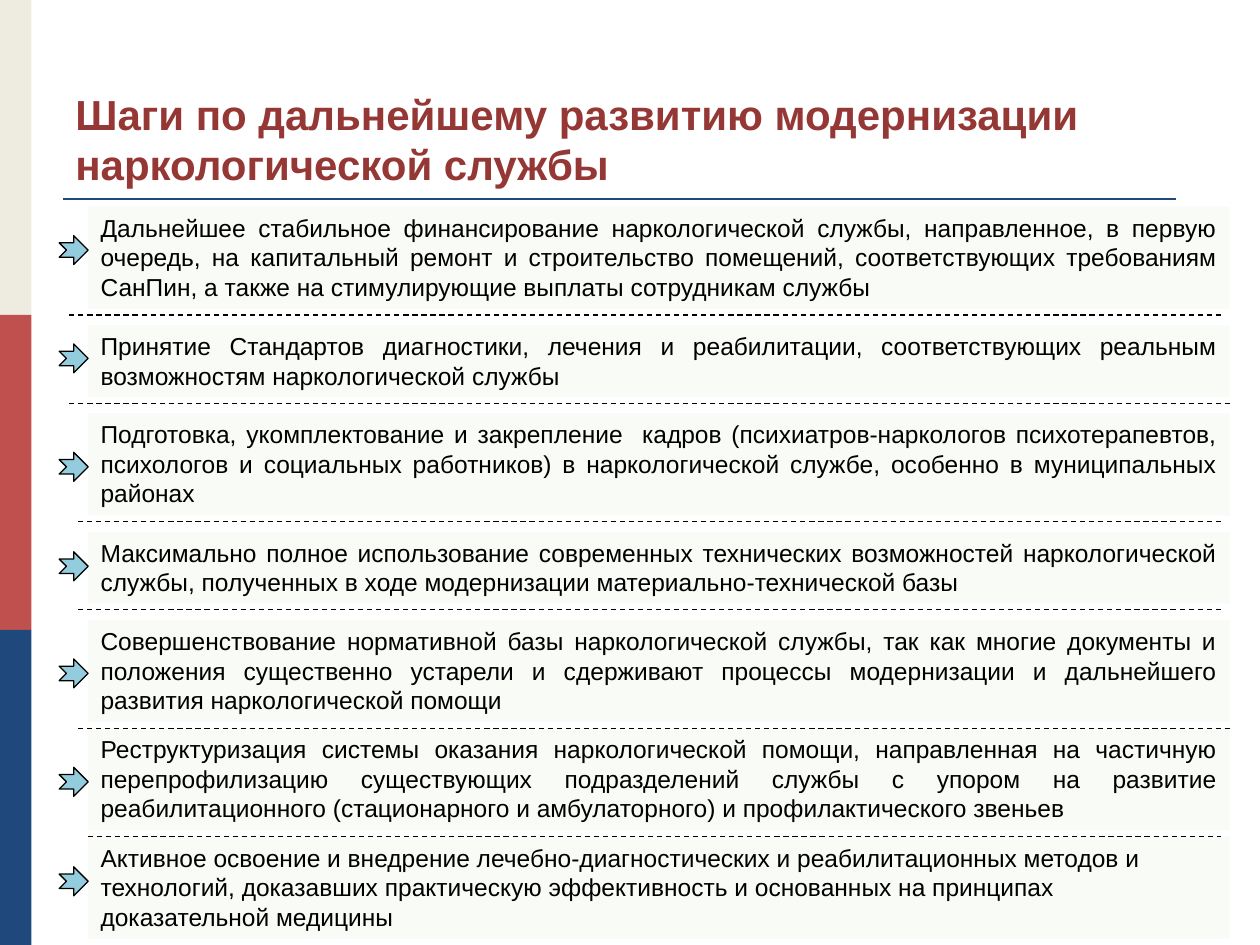
from dataclasses import dataclass

from lxml import etree
from pptx import Presentation
from pptx import util as u
from pptx.dml.color import RGBColor
from pptx.enum import dml, shapes, text
from pptx.oxml import ns


@dataclass(frozen=True)
class Theme:
    font: str = "Arial"
    title_size: int = 24
    body_size: int = 14
    rule_width: float = 1.5
    thin_width: float = 0.75
    cream: str = "EEECE1"
    red: str = "C0504D"
    navy: str = "1F497D"
    title: str = "953735"
    ink: str = "000000"
    panel: str = "F2F6EA"
    panel_opacity: int = 40
    arrow: str = "93CDDD"


class SlideBuilder:
    """Places elements on a grid of 100 columns by 75 rows."""

    COLUMNS, ROWS = 100, 75

    def __init__(self, deck, theme):
        self.theme = theme
        self.slide = deck.slides.add_slide(deck.slide_layouts[6])
        self.column = deck.slide_width / self.COLUMNS
        self.row = deck.slide_height / self.ROWS

    def place(self, col, row, *rest):
        """Turn alternating columns and rows into slide lengths."""
        units = (self.column, self.row) * 2
        return [u.Emu(round(n * unit)) for n, unit in zip((col, row, *rest), units)]

    def block(self, area, fill, opacity=100, kind=shapes.MSO_SHAPE.RECTANGLE, outline=None):
        block = self.slide.shapes.add_shape(kind, *self.place(*area))
        block.shadow.inherit = False
        block.fill.solid()
        block.fill.fore_color.rgb = RGBColor.from_string(fill)
        if opacity < 100:
            color = block._element.spPr.find(".//" + ns.qn("a:srgbClr"))
            etree.SubElement(color, ns.qn("a:alpha")).set("val", str(opacity * 1000))
        if outline:
            block.line.color.rgb = RGBColor.from_string(outline)
            block.line.width = u.Pt(self.theme.thin_width)
        else:
            block.line.fill.background()
        return block

    def line(self, start, end, color, width, dashed=False):
        line = self.slide.shapes.add_connector(
            shapes.MSO_CONNECTOR.STRAIGHT, *self.place(*start), *self.place(*end))
        line.line.color.rgb = RGBColor.from_string(color)
        line.line.width = u.Pt(width)
        if dashed:
            line.line.dash_style = dml.MSO_LINE.DASH
        etree.SubElement(line._element.spPr, ns.qn("a:effectLst"))

    def set_words(self, holder, words, size, color, align, anchor, bold=False):
        frame = holder.text_frame
        frame.word_wrap = True
        frame.vertical_anchor = anchor
        frame.text = words
        paragraph = frame.paragraphs[0]
        paragraph.alignment = align
        for run in paragraph.runs:
            run.font.name = self.theme.font
            run.font.size = u.Pt(size)
            run.font.bold = bold
            run.font.color.rgb = RGBColor.from_string(color)

    def heading(self, area, words):
        holder = self.slide.shapes.add_textbox(*self.place(*area))
        self.set_words(holder, words, self.theme.title_size, self.theme.title,
                       text.PP_ALIGN.LEFT, text.MSO_ANCHOR.BOTTOM, bold=True)

    def step(self, area, words, align):
        panel = self.block(area, self.theme.panel, self.theme.panel_opacity)
        self.set_words(panel, words, self.theme.body_size, self.theme.ink,
                       align, text.MSO_ANCHOR.TOP)

    def divider(self, left, right, row):
        self.line((left, row), (right, row), self.theme.ink,
                  self.theme.thin_width, dashed=True)

    def arrow(self, col, row, side):
        self.block((col, row, side, side), self.theme.arrow,
                   kind=shapes.MSO_SHAPE.NOTCHED_RIGHT_ARROW, outline=self.theme.ink)


TITLE = "Шаги по дальнейшему развитию модернизации наркологической службы"
WIDE_GAP, TIGHT_GAP, DIVIDER_GAP = 1.3, 0.5, 0.5
PANEL_HEIGHT = {2: 5.7, 3: 8.1}  # by number of text lines

# Wording, text lines, gap below, arrow row
STEPS = [
    ("Дальнейшее стабильное финансирование наркологической службы, направленное, "
     "в первую очередь, на капитальный ремонт и строительство помещений, "
     "соответствующих требованиям СанПин, а также на стимулирующие выплаты "
     "сотрудникам службы", 3, WIDE_GAP, 18.7),
    ("Принятие Стандартов диагностики, лечения и реабилитации, соответствующих "
     "реальным возможностям наркологической службы", 2, WIDE_GAP, 27.3),
    ("Подготовка, укомплектование и закрепление  кадров (психиатров-наркологов "
     "психотерапевтов, психологов и социальных работников) в наркологической "
     "службе, особенно в муниципальных районах", 3, WIDE_GAP, 35.9),
    ("Максимально полное использование современных технических возможностей "
     "наркологической службы, полученных в ходе модернизации "
     "материально-технической базы", 2, WIDE_GAP, 43.8),
    ("Совершенствование нормативной базы наркологической службы, так как многие "
     "документы и положения существенно устарели и сдерживают процессы "
     "модернизации и дальнейшего развития наркологической помощи", 3, TIGHT_GAP, 52.3),
    ("Реструктуризация системы оказания наркологической помощи, направленная на "
     "частичную перепрофилизацию существующих подразделений службы с упором на "
     "развитие реабилитационного (стационарного и амбулаторного) и "
     "профилактического звеньев", 3, TIGHT_GAP, 60.9),
    ("Активное освоение и внедрение лечебно-диагностических и реабилитационных "
     "методов и технологий, доказавших практическую эффективность и основанных "
     "на принципах доказательной медицины", 3, 0, 68.8),
]
# Left and right ends of the line below each step but the last
DIVIDER_ENDS = [(5.5, 96.9), (5.5, 97.7), (6.2, 96.9),
                (6.2, 96.9), (6.2, 97.7), (7, 96.9)]


def main():
    deck = Presentation()
    deck.slide_width, deck.slide_height = u.Inches(10), u.Inches(7.5)
    theme = Theme()
    page = SlideBuilder(deck, theme)

    # Side stripe in three equal bands
    for band, color in enumerate((theme.cream, theme.red, theme.navy)):
        page.block((0, band * 25, 2.5, 25), color)

    # Title and its rule
    page.line((5, 15.8), (93.3, 15.8), theme.navy, theme.rule_width)
    page.heading((5, 3, 90, 12.5), TITLE)

    # Steps stacked from the top; the last one is left-aligned
    top, bottoms = 16.4, []
    for words, lines, gap, _ in STEPS:
        height = PANEL_HEIGHT[lines]
        last = words == STEPS[-1][0]
        align = text.PP_ALIGN.LEFT if last else text.PP_ALIGN.JUSTIFY
        page.step((7, top, 90.6, height), words, align)
        bottoms.append(top + height)
        top += height + gap

    # Dashed dividers
    for (left, right), bottom in zip(DIVIDER_ENDS, bottoms):
        page.divider(left, right, bottom + DIVIDER_GAP)

    # Arrow markers
    for *_, arrow_row in STEPS:
        page.arrow(4.7, arrow_row, 2.3)

    deck.save("out.pptx")


if __name__ == "__main__":
    main()
